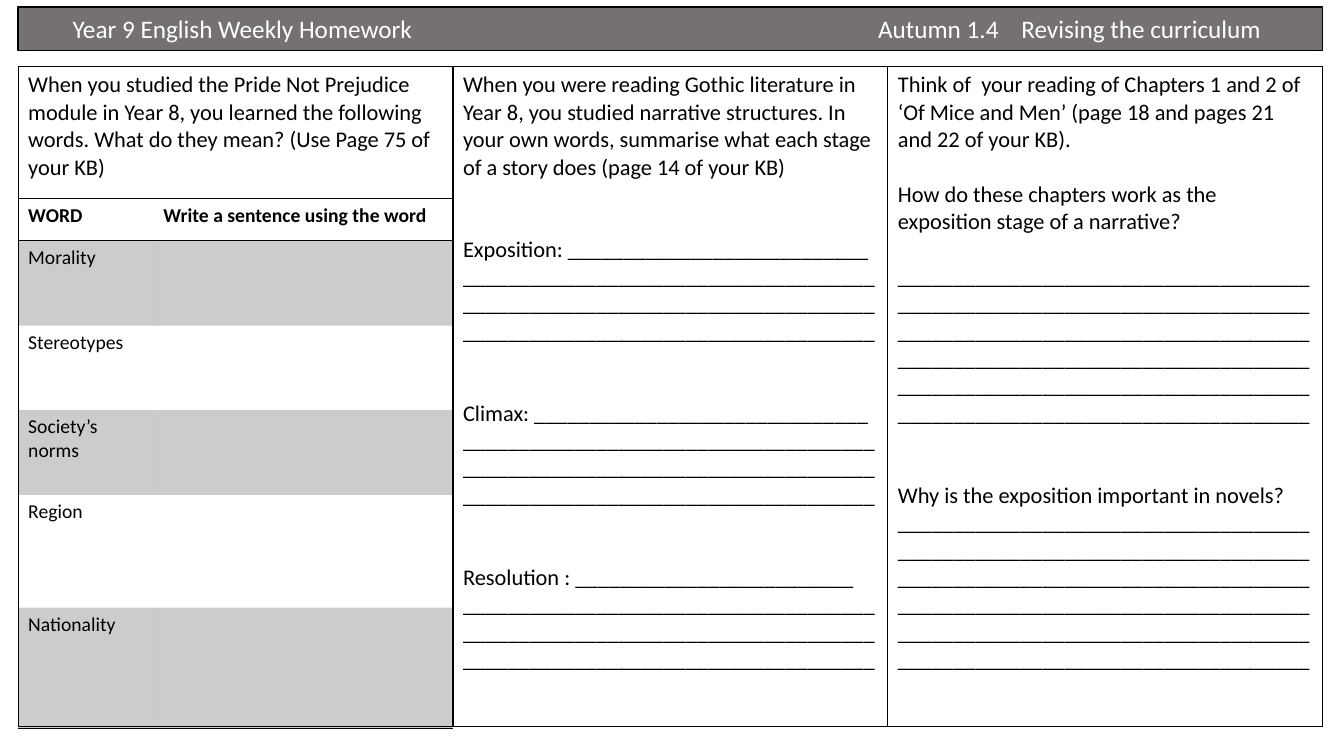
from lxml import etree
from pptx import Presentation, util as u
from pptx.dml.color import RGBColor
from pptx.enum import shapes, text
from pptx.oxml import ns

# Page grid, in inches
LEFT, WIDTH = 0.18, 12.94
COLUMN = WIDTH / 3
TASK_TOP, TASK_HEIGHT = 0.66, 6.55
WORD_TOP = 1.97
BLANK_LINE = 19.5  # height of one line of 16 pt text, in points
ANSWER = "_" * 37 * 3  # three full lines to write on
PLAIN_TABLE = "{2D5ABB26-0587-4C30-8999-92F81FD0307C}"

# Each task column: (text, blank lines above)
TASKS = [
    [("When you studied the Pride Not Prejudice module in Year 8, you learned "
      "the following words. What do they mean? (Use Page 75 of your KB)", 0)],
    [("When you were reading Gothic literature in Year 8, you studied narrative "
      "structures. In your own words, summarise what each stage of a story does "
      "(page 14 of your KB)", 0),
     ("Exposition: " + "_" * 27, 2), (ANSWER, 0),
     ("Climax: " + "_" * 30, 2), (ANSWER, 0),
     ("Resolution : " + "_" * 25, 2), (ANSWER, 0)],
    [("Think of  your reading of Chapters 1 and 2 of ‘Of Mice and Men’ "
      "(page 18 and pages 21 and 22 of your KB).", 0),
     ("How do these chapters work as the exposition stage of a narrative?", 1),
     (ANSWER, 1), (ANSWER, 0),
     ("Why is the exposition important in novels?", 2),
     (ANSWER, 0), (ANSWER, 0)],
]
WORDS = ["Morality", "Stereotypes", "Society’s norms", "Region", "Nationality"]
WORD_ROWS = [0.42, 0.84, 0.84, 0.84, 1.12, 1.2]


def colour(value):
    return RGBColor.from_string(value)


def add_child(parent, tag, **attributes):
    return etree.SubElement(parent, ns.qn(tag), attributes)


def write(paragraph, words, size=16, color="000000", bold=False, blank_lines=0):
    run = paragraph.add_run()
    run.text = words
    run.font.name = "Calibri"
    run.font.size = u.Pt(size)
    run.font.bold = bold
    run.font.color.rgb = colour(color)
    paragraph.space_before = u.Pt(blank_lines * BLANK_LINE)


def add_border(cell, sides):
    """Draw a thin black border on the given sides, in the order L, R, T, B."""
    properties = cell._tc.get_or_add_tcPr()
    for side in sides:
        line = add_child(properties, "a:ln" + side, w=str(u.Pt(1)))
        fill = add_child(line, "a:solidFill")
        add_child(fill, "a:srgbClr", val="000000")


def shade(cell, percent):
    cell.fill.solid()
    cell.fill.fore_color.rgb = colour("000000")
    tint = cell._tc.tcPr.find(".//" + ns.qn("a:solidFill") + "[last()]")
    tint = cell._tc.tcPr.findall(ns.qn("a:solidFill"))[0][0] if tint is not None else tint
    add_child(tint, "a:alpha", val=str(percent * 1000))


def add_plain_table(slide, top, columns, rows):
    frame = slide.shapes.add_table(
        len(rows), len(columns), u.Inches(LEFT), u.Inches(top),
        u.Inches(sum(columns)), u.Inches(sum(rows)))
    table = frame.table
    table.first_row = table.horz_banding = False
    table._tbl.tblPr.find(ns.qn("a:tableStyleId")).text = PLAIN_TABLE
    for column, width in zip(table.columns, columns):
        column.width = u.Inches(width)
    for row, height in zip(table.rows, rows):
        row.height = u.Inches(height)
    return table


def add_header(slide, parts, tab_stops):
    bar = slide.shapes.add_shape(
        shapes.MSO_SHAPE.RECTANGLE, u.Inches(LEFT), u.Inches(0.07),
        u.Inches(WIDTH), u.Inches(0.43))
    bar.shadow.inherit = False
    bar.fill.solid()
    bar.fill.fore_color.rgb = colour("767171")
    bar.line.color.rgb = colour("000000")
    bar.line.width = u.Pt(1)
    frame = bar.text_frame
    frame.margin_left = u.Inches(0.54)
    frame.vertical_anchor = text.MSO_ANCHOR.MIDDLE
    paragraph = frame.paragraphs[0]
    paragraph.alignment = text.PP_ALIGN.LEFT
    write(paragraph, "\t".join(parts), size=18, color="FFFFFF")
    tabs = add_child(paragraph._p.get_or_add_pPr(), "a:tabLst")
    for stop in tab_stops:
        add_child(tabs, "a:tab", pos=str(u.Inches(stop)), algn="l")


def add_tasks(slide):
    table = add_plain_table(slide, TASK_TOP, [COLUMN] * 3, [TASK_HEIGHT])
    for cell, task in zip(table.rows[0].cells, TASKS):
        add_border(cell, "LRTB")
        frame = cell.text_frame
        for index, (words, blank_lines) in enumerate(task):
            paragraph = frame.add_paragraph() if index else frame.paragraphs[0]
            write(paragraph, words, blank_lines=blank_lines)


def add_word_list(slide):
    table = add_plain_table(slide, WORD_TOP, [1.34, COLUMN - 1.34], WORD_ROWS)
    entries = [("WORD", "Write a sentence using the word")]
    entries += [(word, "") for word in WORDS]
    for index, (row, entry) in enumerate(zip(table.rows, entries)):
        for cell, words in zip(row.cells, entry):
            if index == 0:
                add_border(cell, "TB")
            elif index == len(WORDS):
                add_border(cell, "B")
            if index % 2:
                shade(cell, 20)
            if words:
                write(cell.text_frame.paragraphs[0], words, size=14, bold=index == 0)


def main():
    presentation = Presentation()
    presentation.slide_width = u.Inches(13.33)
    presentation.slide_height = u.Inches(7.5)
    slide = presentation.slides.add_slide(presentation.slide_layouts[6])
    add_header(slide, ["Year 9 English Weekly Homework", "Autumn 1.4",
                       "Revising the curriculum"], [7.99, 9.41])
    add_tasks(slide)
    add_word_list(slide)
    presentation.save("out.pptx")


if __name__ == "__main__":
    main()
